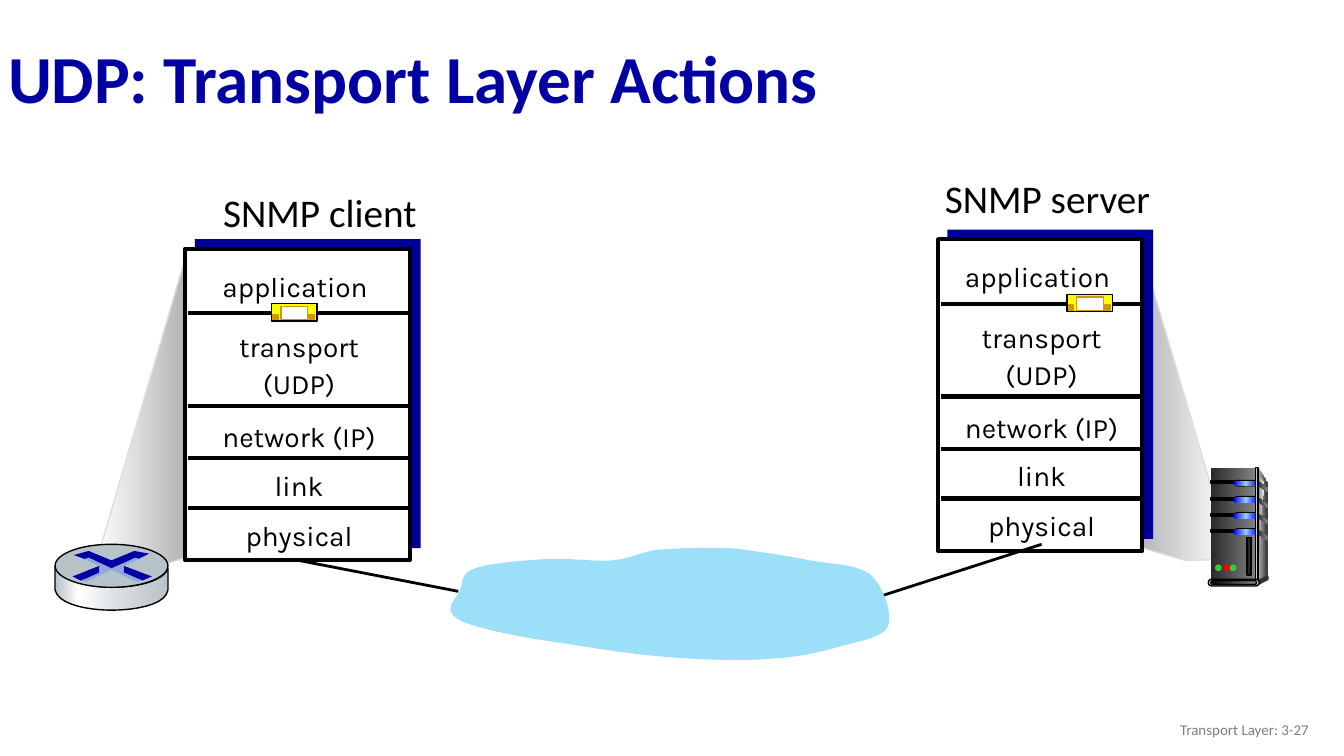
from pptx import Presentation
from pptx.dml.color import RGBColor as RGB
from pptx.enum.shapes import MSO_CONNECTOR as LINK, MSO_SHAPE as KIND
from pptx.enum.text import MSO_ANCHOR as ANCHOR, PP_ALIGN as ALIGN
from pptx.oxml import parse_xml
from pptx.oxml.ns import nsdecls, qn
from pptx.util import Pt

PX = 9144
WIDE = 1000 * PX
HEX = {
    "black": "000000", "white": "FFFFFF", "navy": "000099", "title": "0000A3",
    "grey": "7F7F7F", "mid": "808080", "pale": "DDDDDD", "mist": "B2B2B2",
    "dark": "333333", "coal": "292929", "snow": "F8F8F8", "sky": "9CDFF9",
    "blue": "0000FF", "ice": "99CCFF", "green": "33CC33", "red": "FF0000",
    "steel": "B8C2C9", "silver": "D6DCE0", "haze": "8DA9DB",
    "yellow": "FFFF00", "gold": "CC9900",
}
FADES = {
    "beam left": {0: "white", 100: "mist"},
    "beam right": {0: "mist", 100: "white"},
    "side": {0: "pale", 100: "dark"},
    "front": {0: "coal", 100: "mid"},
    "panel": {0: "mid", 100: "snow"},
    "light": {0: "blue", 50: "ice", 100: "blue"},
    "edge": {0: "dark", 50: "pale", 100: "dark"},
    "base": {0: "black", 100: "mid"},
    "metal": {0: "steel", 21: "white", 60: "silver", 100: "steel"},
}
LAYERS = [("application", 9, 33, 6), ("transport\n(UDP)", 54, 61, 9),
          ("network (IP)", 121, 33, 9), ("link", 157, 33, 9),
          ("physical", 194, 33, 9)]
CLOUD = [
    (157, 2), (142, 4, 136, 9, 122, 10), (108, 11, 90, 8, 73, 9),
    (56, 10, 31, 12, 20, 16), (9, 20, 12, 27, 9, 33), (6, 38, 0, 44, 3, 49),
    (5, 53, 10, 56, 25, 60), (39, 64, 66, 69, 89, 72),
    (113, 76, 139, 80, 165, 82), (190, 84, 220, 85, 242, 83),
    (264, 82, 281, 77, 296, 73), (310, 69, 325, 67, 328, 58),
    (331, 49, 324, 28, 314, 20), (303, 12, 282, 13, 265, 9),
    (248, 6, 230, 3, 212, 1), (194, 0, 172, 1, 157, 2),
]


def tint(name):
    """Return the colour with this name."""
    return RGB.from_string(HEX[name])


def paint(shape, fill, line=None, width=0.75):
    """Give a shape its fill and its outline."""
    shape.shadow.inherit = False
    if fill in FADES:
        shape.fill.gradient()
        shape.fill.gradient_angle = 0
        stops = shape._element.spPr.find(qn("a:gradFill")).find(qn("a:gsLst"))
        for old in list(stops):
            stops.remove(old)
        for pos, name in FADES[fill].items():
            stops.append(parse_xml(
                f'<a:gs {nsdecls("a")} pos="{pos * 1000}">'
                f'<a:srgbClr val="{HEX[name]}"/></a:gs>'))
    else:
        shape.fill.solid()
        shape.fill.fore_color.rgb = tint(fill)
    if line:
        shape.line.color.rgb = tint(line)
        shape.line.width = Pt(width)
    else:
        shape.line.fill.background()


def block(shapes, box, fill, line=None, width=0.75, kind=KIND.RECTANGLE):
    """Add a preset shape in a box."""
    shape = shapes.add_shape(kind, *(v * PX for v in box))
    if kind == KIND.ROUNDED_RECTANGLE:
        shape.adjustments[0] = 0.5
    paint(shape, fill, line, width)


def outline(shapes, x, y, path, fill, line=None):
    """Add a closed outline of points and cubic curves."""
    dots = [path[0]]
    for step in path[1:]:
        if len(step) == 2:
            dots.append(step)
            continue
        knots = [dots[-1], step[:2], step[2:4], step[4:]]
        for n in range(1, 11):
            t = n / 10
            parts = ((1 - t) ** 3, 3 * t * (1 - t) ** 2,
                     3 * t * t * (1 - t), t ** 3)
            dots.append(tuple(sum(k * p[i] for k, p in zip(parts, knots))
                              for i in (0, 1)))
    spots = [(round((x + a) * PX), round((y + b) * PX)) for a, b in dots]
    pen = shapes.build_freeform(*spots[0], scale=1.0)
    pen.add_line_segments(spots[1:], close=True)
    paint(pen.convert_to_shape(), fill, line)


def wire(shapes, x1, y1, x2, y2, width):
    """Add a straight black line."""
    line = shapes.add_connector(LINK.STRAIGHT, *(v * PX for v in (x1, y1, x2, y2)))
    line.line.color.rgb = tint("black")
    line.line.width = Pt(width)
    line._element.spPr.append(parse_xml(f'<a:effectLst {nsdecls("a")}/>'))


def label(shapes, box, text, size, font="Calibri", color="black",
          align=ALIGN.LEFT, lead=1.0, anchor=ANCHOR.TOP, bold=False):
    """Add a text box with one paragraph for each line."""
    frame = shapes.add_textbox(*(v * PX for v in box)).text_frame
    frame.word_wrap = True
    frame.vertical_anchor = anchor
    frame.margin_left = frame.margin_right = 7 * PX
    frame.margin_top = frame.margin_bottom = 4 * PX
    for n, line in enumerate(text.split("\n")):
        para = frame.add_paragraph() if n else frame.paragraphs[0]
        para.alignment = align
        para.line_spacing = lead
        run = para.add_run()
        run.text = line
        run.font.name = font
        run.font.size = Pt(size)
        run.font.bold = bold
        run.font.color.rgb = tint(color)


def stack(slide, x, y, w):
    """Draw the five protocol layers."""
    group = slide.shapes.add_group_shape().shapes
    block(group, (x + 7, y - 7, w + 1, 230), "navy")
    block(group, (x, y, w, 232), "white", "black", 2.25)
    for dy in (48, 117, 156, 193):
        wire(group, x + 2, y + dy, x + w, y + dy, 2.25)
    for text, dy, h, dx in LAYERS:
        label(group, (x + dx, y + dy, w - 16, h), text, 15, "Karla",
              align=ALIGN.CENTER, lead=1.1)


def packet(slide, x, y):
    """Draw a small message packet."""
    group = slide.shapes.add_group_shape().shapes
    block(group, (x, y, 34, 13), "yellow", "black")
    block(group, (x + 7, y + 2, 20, 10), "white", "gold")
    for dx in (1, 28):
        block(group, (x + dx, y + 8, 4, 4), "gold", "gold")


def router(slide, x, y):
    """Draw the router."""
    group = slide.shapes.add_group_shape().shapes
    outline(group, x, y, [
        (84, 18), (84, 34), (82, 46, 57, 49, 42, 49), (28, 49, 3, 46, 0, 34),
        (0, 17), (4, 27, 28, 32, 42, 32), (56, 32, 80, 29, 84, 18)],
        "metal", "black")
    block(group, (x, y, 84, 32), "steel", "black", kind=KIND.OVAL)
    for fill, path in (
        ("title", [(59, 5), (70, 7), (62, 11), (60, 10), (42, 18), (25, 10),
                   (22, 11), (14, 8), (25, 5), (42, 12)]),
        ("title", [(51, 16), (72, 24), (65, 27), (51, 21)]),
        ("title", [(33, 16), (33, 22), (19, 27), (13, 24)]),
        ("haze", [(22, 11), (25, 10), (42, 18), (60, 10), (63, 11), (51, 16),
                  (51, 21), (64, 27), (61, 28), (42, 19), (23, 28), (20, 27),
                  (33, 21), (33, 16)]),
    ):
        outline(group, x, y, path, fill)


def server(slide, x, y):
    """Draw the server tower."""
    group = slide.shapes.add_group_shape().shapes
    pill = KIND.ROUNDED_RECTANGLE
    outline(group, x, y, [(37, 0), (44, 11), (44, 81), (35, 84)], "side")
    block(group, (x + 2, y, 33, 84), "front")
    outline(group, x, y, [(37, 5), (37, 5, 38, 6, 42, 12),
                          (37, 43, 38, 83, 37, 82)], "panel")
    for dy in range(10, 47, 12):
        block(group, (x + 2, y + dy, 19, 2), "black", "black")
        block(group, (x + 19, y + dy - 1, 18, 5), "black", kind=pill)
        block(group, (x + 19, y + dy, 18, 4), "light", kind=pill)
        outline(group, x + 36, y + dy, [(0, 0), (1, 0, 4, 2, 8, 5), (8, 8),
                                        (8, 8, 4, 5, 0, 3)], "front")
    block(group, (x + 35, y, 2, 84), "edge", "black")
    block(group, (x + 43, y + 80, 2, 4), "dark", kind=KIND.OVAL)
    outline(group, x, y, [(36, 84), (36, 88), (44, 84), (44, 80)], "dark")
    block(group, (x, y + 83, 38, 5), "pale", "black", kind=pill)
    block(group, (x + 2, y + 84, 34, 3), "base", "black", kind=pill)
    for dx, fill in ((5, "green"), (11, "red"), (16, "green")):
        block(group, (x + dx, y + 72, 5, 5), fill, kind=KIND.OVAL)
    block(group, (x + 29, y + 52, 3, 28), "coal", "black")


def build():
    """Build and save the slide."""
    deck = Presentation()
    deck.slide_width, deck.slide_height = WIDE, WIDE * 9 // 16
    slide = deck.slides.add_slide(deck.slide_layouts[6])
    shapes = slide.shapes
    outline(shapes, 844, 178, [(73, 238), (3, 0), (0, 228), (38, 239)],
            "beam right", "pale")
    server(slide, 899, 348)
    label(shapes, (696, 126, 169, 43), "SNMP server", 21)
    label(shapes, (159, 136, 161, 43), "SNMP client", 21)
    stack(slide, 698, 178, 152)
    label(shapes, (-1, 24, 910, 73), "UDP: Transport Layer Actions", 36,
          color="title", lead=0.9, anchor=ANCHOR.MIDDLE, bold=True)
    wire(shapes, 775, 405, 654, 444, 1.5)
    wire(shapes, 212, 415, 341, 440, 1.5)
    outline(shapes, 333, 407, CLOUD, "sky")
    outline(shapes, 70, 185, [(0, 239), (70, 0), (68, 230), (36, 240)],
            "beam left", "pale")
    stack(slide, 138, 185, 167)
    router(slide, 41, 405)
    packet(slide, 202, 226)
    packet(slide, 794, 219)
    label(shapes, (756, 528, 225, 30), "Transport Layer: 3-27", 8,
          color="grey", align=ALIGN.RIGHT, anchor=ANCHOR.MIDDLE)
    deck.save("out.pptx")


if __name__ == "__main__":
    build()
